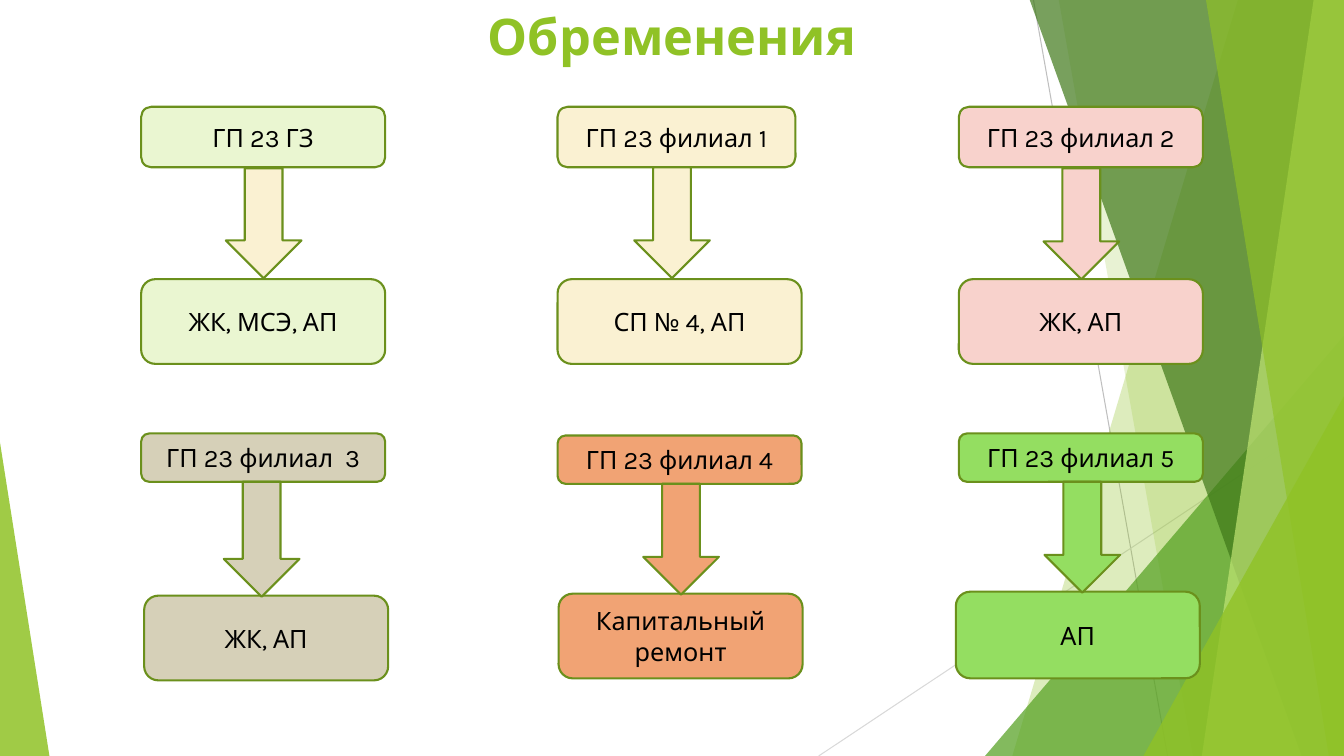
"""Build the slide on encumbrances: six branches, each with an arrow to its facilities."""
from lxml.etree import SubElement
from pptx import Presentation
from pptx.dml.color import RGBColor
from pptx.enum.shapes import MSO_CONNECTOR, MSO_SHAPE as SHAPE
from pptx.enum.text import MSO_ANCHOR as ANCHOR, PP_ALIGN as ALIGN
from pptx.oxml.ns import qn
from pptx.util import Pt

PX = 9144
FONT = "Karla"
COLORS = {
    "lime": "90C226", "leaf": "54A021", "forest": "3F7819", "pale": "C0E474",
    "gray": "BFBFBF", "light gray": "D9D9D9", "outline": "6B901C", "text": "000000",
    "mint": "EAF6D1", "cream": "FAF1D2", "pink": "F8D2CC",
    "sand": "D6D0B8", "orange": "F1A374", "green": "94DE61",
}


def paint(shape, color, opacity=100):
    shape.shadow.inherit = False
    shape.fill.solid()
    shape.fill.fore_color.rgb = RGBColor.from_string(COLORS[color])
    if opacity < 100:
        shape.line.fill.background()
        tint = shape.fill._xPr.find(qn("a:solidFill"))[0]
        SubElement(tint, qn("a:alpha"), val=str(opacity * 1000))
    else:
        shape.line.color.rgb = RGBColor.from_string(COLORS["outline"])
        shape.line.width = Pt(1.5)


def write(shape, text, size, color, anchor):
    frame = shape.text_frame
    frame.word_wrap = True
    frame.vertical_anchor = anchor
    para = frame.paragraphs[0]
    para.text = text
    para.alignment = ALIGN.CENTER
    para.font.name = FONT
    para.font.size = Pt(size)
    para.font.color.rgb = RGBColor.from_string(COLORS[color])
    return para


deck = Presentation()
deck.slide_width, deck.slide_height = 1333 * PX, 750 * PX
slide = deck.slides.add_slide(deck.slide_layouts[6])
shapes = slide.shapes

for ends, color in [((1025, 0, 1158, 750), "gray"), ((1333, 403, 812, 750), "light gray")]:
    line = shapes.add_connector(MSO_CONNECTOR.STRAIGHT, *(end * PX for end in ends))
    line.line.color.rgb = RGBColor.from_string(COLORS[color])
    line.line.width = Pt(0.75)
    SubElement(line._element.spPr, qn("a:effectLst"))

facets = [
    ("band", (1228, 1004), "lime", 30),
    ("band", (1050, 1183), "lime", 20),
    ("triangle", (977, 333, 356, 417, 1), "leaf", 72),
    ("band", (1021, 1291), "forest", 70),
    ("band", (1303, 1192), "pale", 70),
    ("band", (1196, 1318), "lime", 65),
    ("triangle", (1134, 393, 199, 357, 1), "lime", 80),
    ("triangle", (0, 439, 49, 311, 0), "lime", 85),
]
for kind, geometry, color, opacity in facets:
    if kind == "band":
        top_x, bottom_x = geometry
        builder = shapes.build_freeform(top_x, -1, scale=PX)
        builder.add_line_segments([(1333, -1), (1333, 750), (bottom_x, 750)], close=True)
        facet = builder.convert_to_shape()
    else:
        *bounds, apex = geometry
        facet = shapes.add_shape(SHAPE.ISOSCELES_TRIANGLE, *(length * PX for length in bounds))
        facet.adjustments[0] = apex
    paint(facet, color, opacity)

title = shapes.add_textbox(0, 0, 1333 * PX, 56 * PX)
write(title, "Обременения", 36, "lime", ANCHOR.TOP).font.bold = True

branches = [
    ("ГП 23 ГЗ", (140, 106, 242, 60), "ЖК, МСЭ, АП", (140, 277, 242, 84),
     (224, 167, 75, 109), "mint", "cream"),
    ("ГП 23 филиал 1", (553, 106, 236, 60), "СП № 4, АП", (553, 277, 242, 84),
     (629, 166, 75, 110), "cream", "cream"),
    ("ГП 23 филиал 2", (951, 106, 242, 60), "ЖК, АП", (951, 277, 242, 84),
     (1035, 167, 75, 110), "pink", "pink"),
    ("ГП 23 филиал  3", (140, 430, 242, 48), "ЖК, АП", (143, 591, 242, 84),
     (222, 478, 75, 114), "sand", "sand"),
    ("ГП 23 филиал 4", (553, 432, 242, 48), "Капитальный ремонт", (554, 589, 242, 84),
     (638, 480, 75, 110), "orange", "orange"),
    ("ГП 23 филиал 5", (951, 430, 242, 48), "АП", (948, 587, 242, 86),
     (1036, 478, 75, 110), "green", "green"),
]
for branch, branch_bounds, facility, facility_bounds, arrow_bounds, color, arrow_color in branches:
    for text, bounds in [(branch, branch_bounds), (facility, facility_bounds)]:
        box = shapes.add_shape(SHAPE.ROUNDED_RECTANGLE, *(length * PX for length in bounds))
        paint(box, color)
        write(box, text, 18, "text", ANCHOR.MIDDLE)
    arrow = shapes.add_shape(SHAPE.DOWN_ARROW, *(length * PX for length in arrow_bounds))
    paint(arrow, arrow_color)

deck.save("out.pptx")
